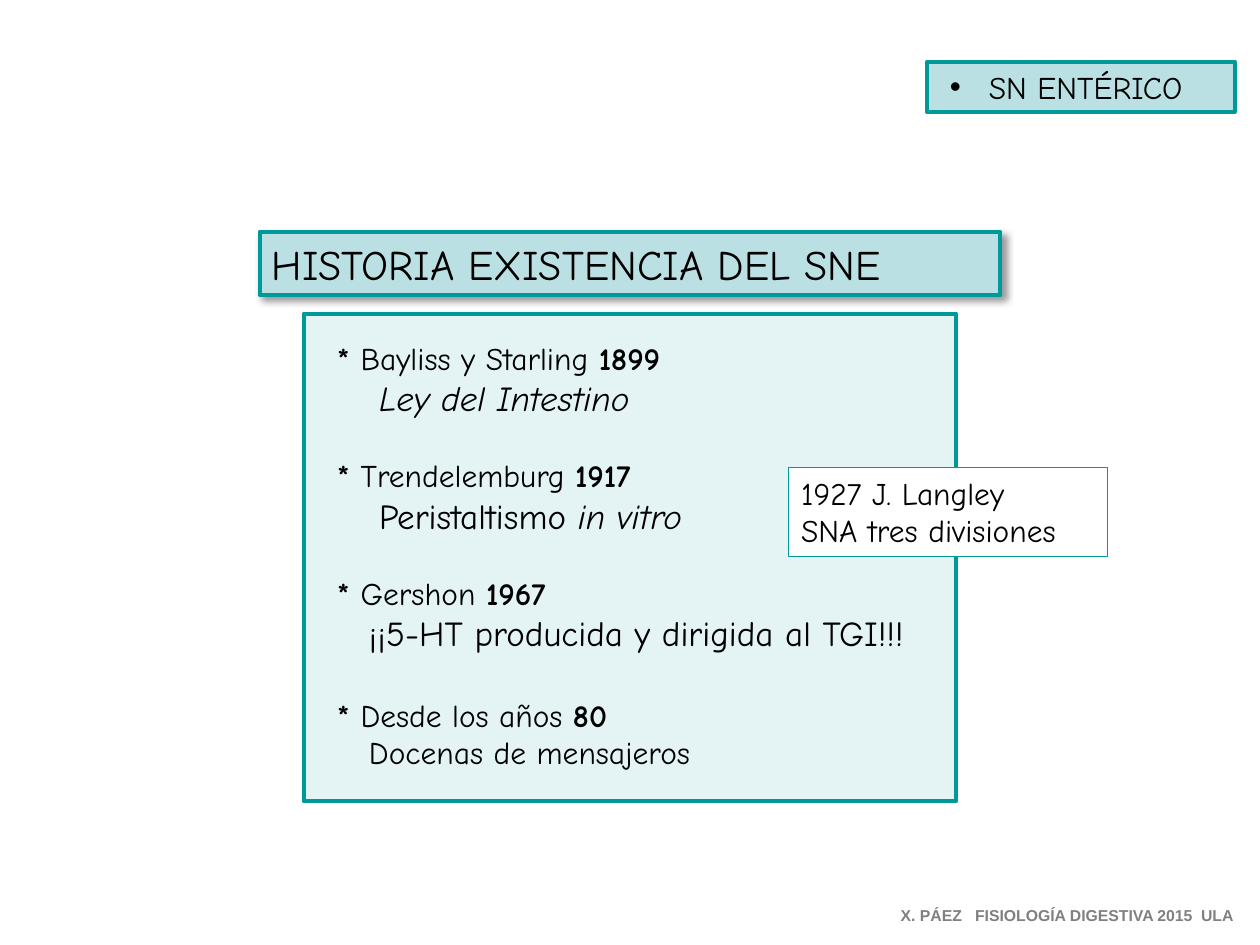
from dataclasses import dataclass
from typing import Optional

from lxml import etree
from pptx import Presentation
from pptx.dml.color import RGBColor
from pptx.enum.shapes import MSO_SHAPE
from pptx.enum.text import MSO_ANCHOR, PP_ALIGN
from pptx.oxml.ns import qn
from pptx.util import Emu, Inches, Pt

RECTANGLE = MSO_SHAPE.RECTANGLE
TOP = MSO_ANCHOR.TOP
LEFT = PP_ALIGN.LEFT

TEAL = RGBColor(0x00, 0x99, 0x99)
AQUA = RGBColor(0xBB, 0xE0, 0xE3)
PALE_AQUA = RGBColor(0xE4, 0xF3, 0xF4)
WHITE = RGBColor(0xFF, 0xFF, 0xFF)
BLACK = RGBColor(0x00, 0x00, 0x00)
GRAY = RGBColor(0x80, 0x80, 0x80)
HAND_FONT = "Comic Neue"
FOOTER_FONT = "Arial"


@dataclass(frozen=True)
class Span:
    text: str
    bold: bool = False
    italic: bool = False
    tracking: float = 0


@dataclass(frozen=True)
class Line:
    spans: tuple[Span, ...]
    size: float = 18
    indent: float = 0
    hanging: float = 0
    gap_before: float = 0
    bullet: str = ""
    font: str = HAND_FONT
    color: RGBColor = BLACK


@dataclass(frozen=True)
class Box:
    left: float
    top: float
    width: float
    height: float
    lines: tuple[Line, ...]
    fill: Optional[RGBColor] = None
    border: float = 2.25
    inset_top: float = 0.05
    shadow: bool = False


@dataclass(frozen=True)
class Milestone:
    author: str
    year: str
    finding: tuple[Span, ...]
    finding_size: float
    finding_indent: float
    gap_before: float

    def lines(self) -> tuple[Line, Line]:
        heading = (Span("* ", bold=True), Span(f"{self.author} "), Span(self.year, bold=True))
        return (
            Line(heading, indent=0.17, gap_before=self.gap_before),
            Line(self.finding, self.finding_size, self.finding_indent),
        )


MILESTONES = (
    Milestone("Bayliss y Starling", "1899", (Span("Ley del Intestino", italic=True),), 20, 0.5, 0),
    Milestone("Trendelemburg", "1917",
              (Span("Peristaltismo "), Span("in vitro", italic=True)), 20, 0.5, 21.5),
    Milestone("Gershon", "1967",
              (Span("¡¡5-HT producida y dirigida al TGI!!!"),), 20, 0.42, 21.5),
    Milestone("Desde los años", "80", (Span("Docenas de mensajeros"),), 18, 0.42, 24),
)

FOOTER = (
    Span("X. PÁEZ", bold=True),
    Span(" ", bold=True, tracking=5),
    Span("FISIOLOGÍA DIGESTIVA 2015", bold=True),
    Span(" ", bold=True, tracking=2.5),
    Span("ULA", bold=True),
)

BOXES = (
    Box(2.06, 1.84, 5.88, 0.5, (Line((Span("HISTORIA EXISTENCIA DEL SNE"),), 24),),
        AQUA, shadow=True),
    Box(2.41, 2.49, 5.18, 3.87,
        tuple(line for milestone in MILESTONES for line in milestone.lines()),
        PALE_AQUA, inset_top=0.2),
    Box(7.36, 0.49, 2.44, 0.4,
        (Line((Span("SN ENTÉRICO"),), indent=0.39, hanging=0.31, bullet="•"),), AQUA),
    Box(6.26, 3.71, 2.53, 0.71,
        (Line((Span("1927 J. Langley"),)), Line((Span("SNA tres divisiones"),))),
        WHITE, border=0.75),
    Box(7.05, 7.14, 2.92, 0.25, (Line(FOOTER, 9, font=FOOTER_FONT, color=GRAY),)),
)


def write_line(paragraph, line: Line) -> None:
    properties = paragraph._p.get_or_add_pPr()
    properties.set("marL", str(Inches(line.indent)))
    properties.set("indent", str(Inches(-line.hanging)))
    paragraph.alignment = LEFT
    if line.gap_before:
        paragraph.space_before = Pt(line.gap_before)
    if line.bullet:
        etree.SubElement(properties, qn("a:buFont"), typeface="Arial")
        etree.SubElement(properties, qn("a:buChar"), char=line.bullet)
    for span in line.spans:
        run = paragraph.add_run()
        run.text = span.text
        run.font.name = line.font
        run.font.size = Pt(line.size)
        run.font.bold = span.bold
        run.font.italic = span.italic
        run.font.color.rgb = line.color
        if span.tracking:
            run._r.get_or_add_rPr().set("spc", str(int(span.tracking * 100)))


def add_soft_shadow(shape) -> None:
    effects = shape._element.spPr.find(qn("a:effectLst"))
    shadow = etree.SubElement(effects, qn("a:outerShdw"), blurRad=str(Pt(4)), dist=str(Pt(3)),
                              dir="2700000", algn="tl", rotWithShape="0")
    color = etree.SubElement(shadow, qn("a:srgbClr"), val=str(BLACK))
    etree.SubElement(color, qn("a:alpha"), val="40000")


def draw_box(slide, box: Box) -> None:
    place: tuple[Emu, ...] = tuple(
        Inches(value) for value in (box.left, box.top, box.width, box.height))
    if box.fill is None:
        shape = slide.shapes.add_textbox(*place)
    else:
        shape = slide.shapes.add_shape(RECTANGLE, *place)
        shape.fill.solid()
        shape.fill.fore_color.rgb = box.fill
        shape.line.color.rgb = TEAL
        shape.line.width = Pt(box.border)
        shape.shadow.inherit = False
        if box.shadow:
            add_soft_shadow(shape)
    frame = shape.text_frame
    frame.word_wrap = True
    frame.vertical_anchor = TOP
    frame.margin_top = Inches(box.inset_top)
    for index, line in enumerate(box.lines):
        write_line(frame.add_paragraph() if index else frame.paragraphs[0], line)


def main() -> None:
    presentation = Presentation()
    presentation.slide_width = Inches(10)
    presentation.slide_height = Inches(7.5)
    slide = presentation.slides.add_slide(presentation.slide_layouts[6])
    for box in BOXES:
        draw_box(slide, box)
    presentation.save("out.pptx")


if __name__ == "__main__":
    main()
